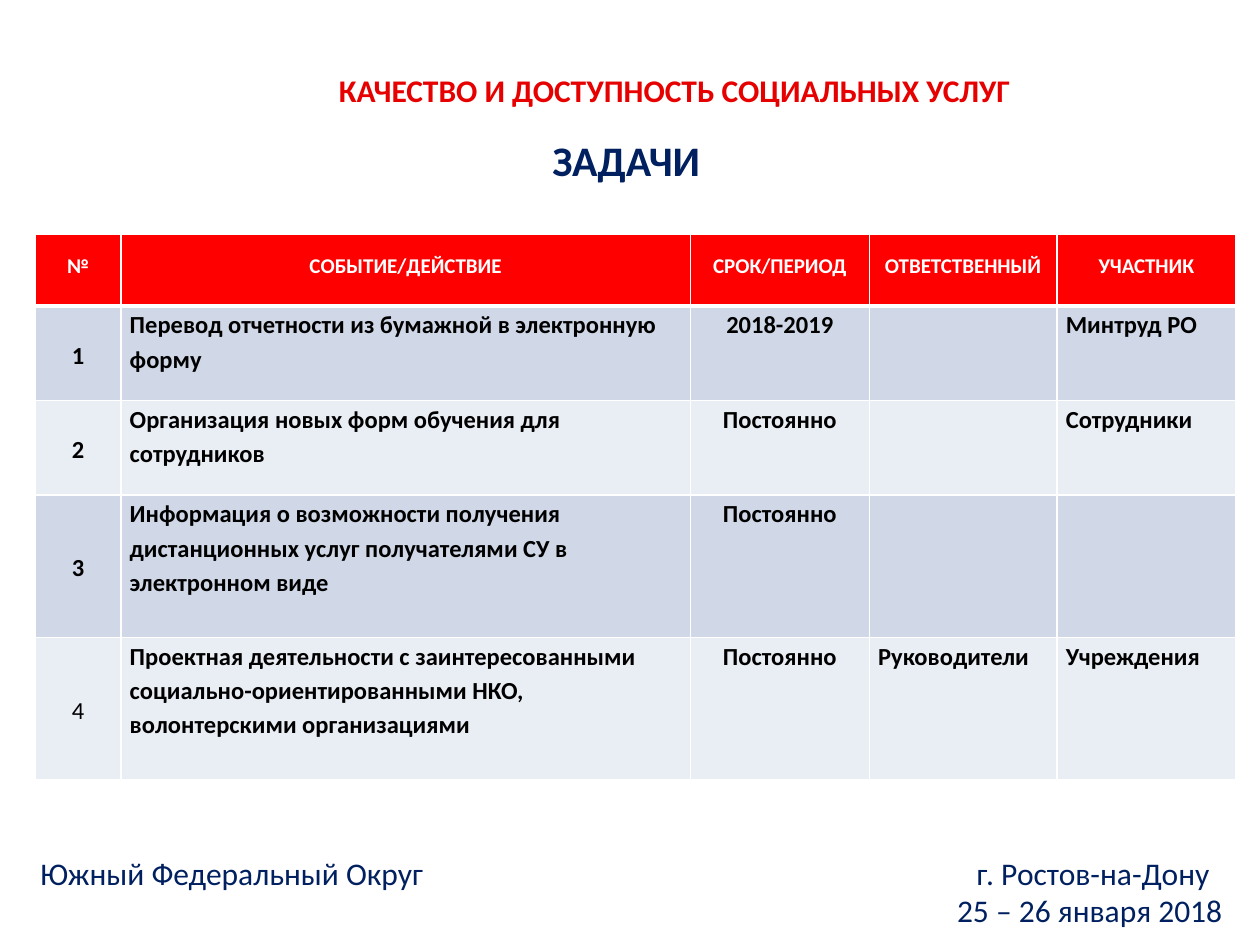
from lxml import etree
from pptx import Presentation
from pptx import util as u
from pptx.dml.color import RGBColor
from pptx.enum import text
from pptx.oxml.ns import qn

NAVY, RED, WHITE, BLACK = "002060", "FF0000", "FFFFFF", "000000"
BANDS = ("D0D8E8", "E9EDF4")
CENTER, LEFT, RIGHT = text.PP_ALIGN.CENTER, text.PP_ALIGN.LEFT, text.PP_ALIGN.RIGHT
MIDDLE, TOP = text.MSO_ANCHOR.MIDDLE, text.MSO_ANCHOR.TOP

COLUMNS = (0.68, 4.52, 1.42, 1.49, 1.42)
ROW_HEIGHTS = (0.57, 0.75, 0.75, 1.13, 1.13)
HEADINGS = ("№", "СОБЫТИЕ/ДЕЙСТВИЕ", "СРОК/ПЕРИОД", "ОТВЕТСТВЕННЫЙ", "УЧАСТНИК")
TASKS = (
    ("1", "Перевод отчетности из бумажной в электронную форму",
     "2018-2019", "", "Минтруд РО"),
    ("2", "Организация новых форм обучения для сотрудников",
     "Постоянно", "", "Сотрудники"),
    ("3", "Информация о возможности получения дистанционных услуг "
          "получателями СУ в электронном виде", "Постоянно", "", ""),
    ("4", "Проектная деятельности с заинтересованными социально-ориентированными "
          "НКО, волонтерскими организациями",
     "Постоянно", "Руководители", "Учреждения"),
)


def color(value):
    return RGBColor.from_string(value)


def write(para, words, *, size, ink, bold=False, align=LEFT, spacing=None):
    """Put one formatted run into a paragraph."""
    para.alignment = align
    if spacing:
        para.line_spacing = spacing
    span = para.add_run()
    span.text = words
    span.font.name = "Calibri"
    span.font.size = u.Pt(size)
    span.font.bold = bold
    span.font.color.rgb = color(ink)


def add_right_tab(para, position):
    """Set a right-aligned tab stop, in inches from the text edge."""
    tabs = etree.SubElement(para._p.get_or_add_pPr(), qn("a:tabLst"))
    etree.SubElement(tabs, qn("a:tab"), pos=str(u.Inches(position)), algn="r")


def add_borders(cell, top, bottom):
    """Draw white cell borders; top and bottom are widths in points."""
    props = cell._tc.get_or_add_tcPr()
    for side, width in (("L", 1), ("R", 1), ("T", top), ("B", bottom)):
        line = etree.SubElement(props, qn(f"a:ln{side}"), w=str(u.Pt(width)))
        fill = etree.SubElement(line, qn("a:solidFill"))
        etree.SubElement(fill, qn("a:srgbClr"), val=WHITE)


class SlideBuilder:
    def __init__(self, page):
        self.page = page

    def text_box(self, left, top, width, height, anchor=TOP):
        box = self.page.shapes.add_textbox(*map(u.Inches, (left, top, width, height)))
        box.text_frame.word_wrap = True
        box.text_frame.vertical_anchor = anchor
        return box.text_frame

    def heading(self, words, place, size, ink, anchor=TOP):
        frame = self.text_box(*place, anchor)
        write(frame.paragraphs[0], words, size=size, ink=ink, bold=True, align=CENTER)

    def footer(self, region, city, dates):
        frame = self.text_box(0.13, 6.78, 9.67, 0.59, MIDDLE)
        frame.margin_left = u.Inches(0.19)
        first = frame.paragraphs[0]
        write(first, f"{region}\t{city}", size=18, ink=NAVY)
        add_right_tab(first, 9.28)
        write(frame.add_paragraph(), dates, size=18, ink=NAVY, align=RIGHT)

    def task_table(self, left, top):
        rows = (HEADINGS, *TASKS)
        table = self.page.shapes.add_table(
            len(rows), len(COLUMNS), u.Inches(left), u.Inches(top),
            u.Inches(sum(COLUMNS)), u.Inches(sum(ROW_HEIGHTS))).table
        for column, width in zip(table.columns, COLUMNS):
            column.width = u.Inches(width)
        for r, (entries, height) in enumerate(zip(rows, ROW_HEIGHTS)):
            table.rows[r].height = u.Inches(height)
            for c, words in enumerate(entries):
                cell = table.cell(r, c)
                add_borders(cell, top=3 if r == 1 else 1, bottom=3 if r == 0 else 1)
                cell.fill.solid()
                if r == 0:
                    self.header_cell(cell, words)
                else:
                    self.body_cell(cell, words, r, c)

    def header_cell(self, cell, words):
        cell.fill.fore_color.rgb = color(RED)
        write(cell.text_frame.paragraphs[0], words, size=12, ink=WHITE, bold=True,
              align=CENTER, spacing=1.5)

    def body_cell(self, cell, words, r, c):
        cell.fill.fore_color.rgb = color(BANDS[(r - 1) % 2])
        cell.margin_left = cell.margin_right = u.Inches(0.07)
        cell.margin_top = cell.margin_bottom = 0
        cell.vertical_anchor = MIDDLE if c == 0 else TOP
        if words:
            write(cell.text_frame.paragraphs[0], words, size=14, ink=BLACK,
                  bold=words != "4", align=CENTER if c in (0, 2) else LEFT,
                  spacing=1.15)


def main():
    deck = Presentation()
    deck.slide_width, deck.slide_height = u.Inches(10), u.Inches(7.5)
    slide = SlideBuilder(deck.slides.add_slide(deck.slide_layouts[6]))
    slide.heading("ЗАДАЧИ", (2.47, 1.02, 5, 0.5), 24, NAVY)
    slide.task_table(0.28, 1.86)
    slide.footer("Южный Федеральный Округ", "г. Ростов-на-Дону", "25 – 26 января 2018")
    slide.heading("КАЧЕСТВО И ДОСТУПНОСТЬ СОЦИАЛЬНЫХ УСЛУГ",
                  (1.78, 0.52, 7.15, 0.39), 18, "E60000", MIDDLE)
    deck.save("out.pptx")


if __name__ == "__main__":
    main()
